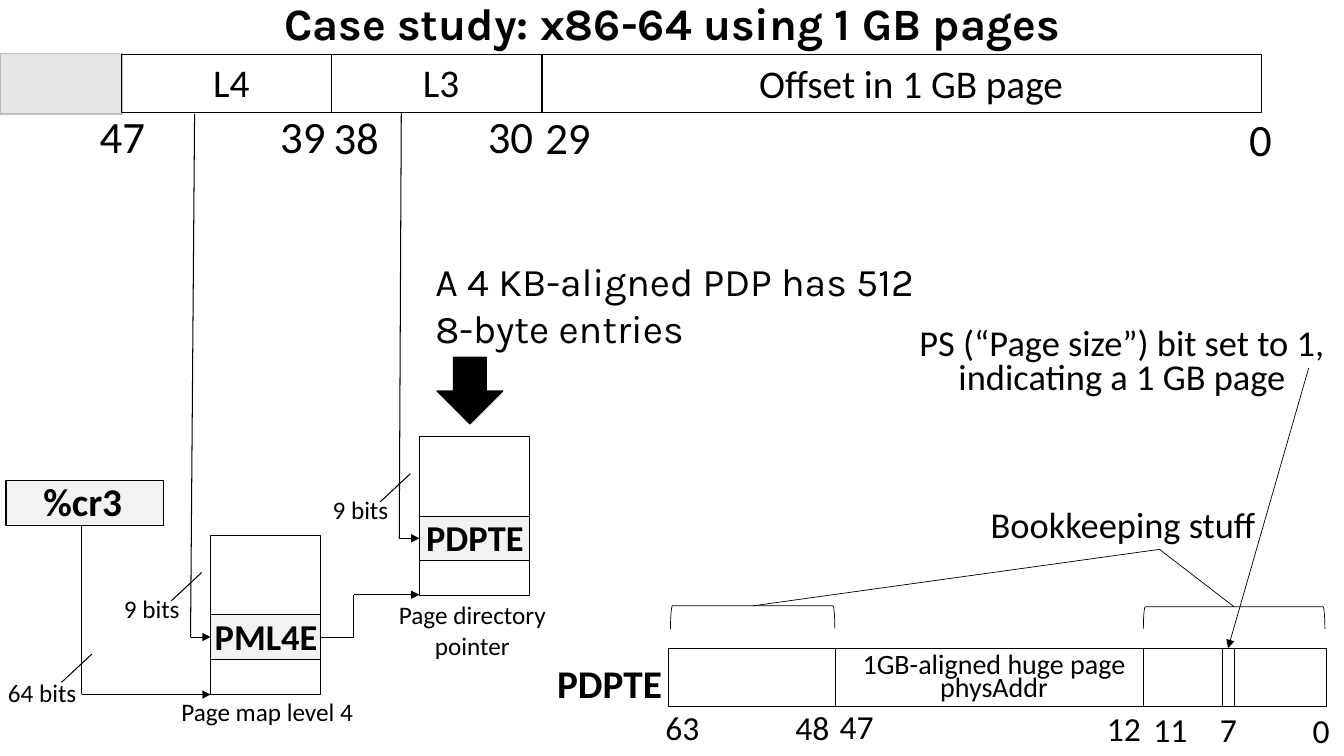
"""Build the x86-64 1 GB page translation slide."""
from dataclasses import dataclass

from lxml import etree
from pptx import Presentation
from pptx import util as u
from pptx.dml.color import RGBColor
from pptx.enum import shapes, text
from pptx.oxml.ns import qn

PX = 9144
Box = tuple[int, int, int, int]
Point = tuple[int, int]


@dataclass(frozen=True)
class Theme:
    ink: str = "000000"
    entry: str = "F2F2F2"
    unused: str = "E7E6E6"
    unused_edge: str = "BFBFBF"
    body: str = "Calibri"
    display: str = "Karla"
    bit: int = 32
    heading: int = 28
    label: int = 26
    small_bit: int = 24
    address: int = 20
    caption: int = 18
    hairline: float = 0.5
    line: float = 0.75
    edge: float = 1


@dataclass(frozen=True)
class PageTable:
    left: int
    top: int
    entry: str
    caption: str
    caption_box: Box
    index_start: Point


@dataclass(frozen=True)
class Bit:
    number: str
    left: int
    top: int
    width: int


@dataclass(frozen=True)
class Label:
    words: str
    box: Box
    size: int
    bold: bool = False
    center: bool = True
    spacing: float | None = None
    font: str = "Calibri"


T = Theme()
TABLES = [
    PageTable(209, 531, "PML4E", "Page map level 4", (164, 686, 202, 40), (193, 113)),
    PageTable(416, 433, "PDPTE", "Page directory pointer", (382, 590, 173, 71), (398, 112)),
]
ADDRESS_BITS = [
    Bit("47", 89, 103, 70), Bit("39", 268, 103, 70), Bit("38", 321, 104, 70),
    Bit("30", 474, 103, 70), Bit("29", 531, 104, 70), Bit("0", 1229, 106, 38),
]
ENTRY_BITS = [
    Bit("63", 650, 696, 54), Bit("48", 779, 696, 54), Bit("47", 823, 695, 54),
    Bit("12", 1088, 697, 62), Bit("11", 1134, 698, 62), Bit("7", 1200, 698, 62),
    Bit("0", 1292, 699, 26),
]
LABELS = [
    Label("L4", (119, 53, 221, 57), T.heading),
    Label("L3", (327, 53, 221, 57), T.heading),
    Label("Offset in 1 GB page", (729, 54, 349, 57), T.heading),
    Label("%cr3", (28, 469, 108, 57), T.heading, bold=True),
    Label("64 bits", (-2, 667, 123, 46), T.caption, center=False),
    Label("A 4 KB-aligned PDP has 512 8-byte entries", (422, 250, 500, 104), T.heading,
          center=False, font=T.display),
    Label("PDPTE", (537, 649, 135, 57), T.heading, bold=True),
    Label("1GB-aligned huge page physAddr", (821, 648, 330, 57), T.address, spacing=u.Pt(16)),
    Label("Bookkeeping stuff", (902, 493, 424, 54), T.label),
    Label("PS (“Page size”) bit set to 1, indicating a 1 GB page", (901, 323, 424, 79), T.label,
          spacing=u.Pt(24)),
]


def add_text(s, words: str, box: Box, *, size: int, bold: bool = False, center: bool = True,
             spacing: float | None = None, font: str = T.body, middle: bool = False):
    """Add a text box with one formatted run."""
    sp = s.shapes.add_textbox(*(v * PX for v in box))
    tf = sp.text_frame
    tf.word_wrap = True
    tf.margin_left = 0 if center else 10 * PX
    tf.margin_right = 0
    tf.vertical_anchor = text.MSO_ANCHOR.MIDDLE if middle else text.MSO_ANCHOR.TOP
    p = tf.paragraphs[0]
    p.alignment = text.PP_ALIGN.CENTER if center else text.PP_ALIGN.LEFT
    if spacing is not None:
        p.line_spacing = spacing
    r = p.add_run()
    r.text = words
    r.font.name, r.font.size, r.font.bold = font, u.Pt(size), bold
    r.font.color.rgb = RGBColor.from_string(T.ink)
    return sp


def add_shape(s, box: Box, *, kind=shapes.MSO_SHAPE.RECTANGLE, fill: str | None = None,
              line: str = T.ink, weight: float = T.line, rotation: int = 0):
    """Add a flat outlined preset shape."""
    sp = s.shapes.add_shape(kind, *(v * PX for v in box))
    sp.shadow.inherit = False
    sp.rotation = rotation
    if fill:
        sp.fill.solid()
        sp.fill.fore_color.rgb = RGBColor.from_string(fill)
    else:
        sp.fill.background()
    sp.line.color.rgb = RGBColor.from_string(line)
    sp.line.width = u.Pt(weight)
    return sp


def add_line(s, start: Point, end: Point, *, weight: float = T.line, arrow: bool = False):
    """Add a straight line, with an optional arrowhead at its end."""
    c = s.shapes.add_connector(shapes.MSO_CONNECTOR.STRAIGHT, *(v * PX for v in start + end))
    c.line.color.rgb = RGBColor.from_string(T.ink)
    c.line.width = u.Pt(weight)
    if arrow:
        etree.SubElement(c.line._get_or_add_ln(), qn("a:tailEnd"), type="triangle")
    etree.SubElement(c._element.spPr, qn("a:effectLst"))
    return c


def add_slash(s, x: int, y: int) -> None:
    """Add the width tick whose upper end is at the given point."""
    add_line(s, (x, y), (x - 30, y + 28))


def add_page_table(s, table: PageTable):
    """Draw a page table with its index path and return the entry."""
    x, y = table.left, table.top
    add_shape(s, (x, y, 109, 158))
    entry = add_shape(s, (x, y + 79, 109, 44), fill=T.entry)
    add_text(s, table.entry, (x - 7, y + 73, 124, 54), size=T.label, bold=True)
    add_text(s, table.caption, table.caption_box, size=T.caption)
    corner = (x - 20, y + 101)
    add_line(s, table.index_start, corner)
    add_line(s, corner, (x, y + 101), arrow=True).end_connect(entry, 1)
    add_slash(s, x - 9, y + 37)
    add_text(s, "9 bits", (x - 96, y + 53, 89, 40), size=T.caption, center=False)
    return entry


def add_paths(s, pml4_entry) -> None:
    """Draw the paths from the root register and from the first table."""
    add_shape(s, (6, 477, 156, 44), fill=T.entry)
    add_line(s, (81, 521), (81, 689))
    add_line(s, (81, 689), (209, 689), arrow=True)
    add_slash(s, 91, 649)
    add_line(s, (318, 632), (351, 632)).begin_connect(pml4_entry, 3)
    add_line(s, (351, 632), (351, 590))
    add_line(s, (351, 590), (416, 590), arrow=True)
    add_shape(s, (433, 355, 66, 65), kind=shapes.MSO_SHAPE.RIGHT_ARROW, fill=T.ink,
              weight=T.edge, rotation=90)


def add_entry_layout(s) -> None:
    """Draw the page directory pointer entry and its callouts."""
    for left, width in ((663, 166), (829, 487)):
        add_shape(s, (left, 643, width, 58))
    add_line(s, (1134, 643), (1134, 701))
    ps_bit = add_shape(s, (1212, 643, 12, 58))
    for box in ((735, 531, 23, 163), (1213, 523, 22, 180)):
        add_shape(s, box, kind=shapes.MSO_SHAPE.LEFT_BRACKET, weight=T.hairline, rotation=90)
    for tip in ((747, 601), (1224, 602)):
        add_line(s, (1150, 545), tip, weight=T.hairline)
    add_line(s, (1298, 365), (1218, 643), weight=T.hairline, arrow=True).end_connect(ps_bit, 0)


def main() -> None:
    """Build and save the slide."""
    prs = Presentation()
    prs.slide_width, prs.slide_height = 1333 * PX, 750 * PX
    s = prs.slides.add_slide(prs.slide_layouts[6])
    add_text(s, "Case study: x86-64 using 1 GB pages", (242, -3, 850, 58), size=T.bit, bold=True,
             spacing=0.9, font=T.display, middle=True)
    add_shape(s, (0, 53, 121, 60), fill=T.unused, line=T.unused_edge, weight=T.edge)
    for left, width in ((121, 208), (329, 208), (538, 713)):
        add_shape(s, (left, 54, width, 58))
    entries = [add_page_table(s, table) for table in TABLES]
    add_paths(s, entries[0])
    add_entry_layout(s)
    for bits, size, height in ((ADDRESS_BITS, T.bit, 64), (ENTRY_BITS, T.small_bit, 50)):
        for b in bits:
            add_text(s, b.number, (b.left, b.top, b.width, height), size=size, center=False)
    for n in LABELS:
        add_text(s, n.words, n.box, size=n.size, bold=n.bold, center=n.center,
                 spacing=n.spacing, font=n.font)
    prs.save("out.pptx")


if __name__ == "__main__":
    main()
